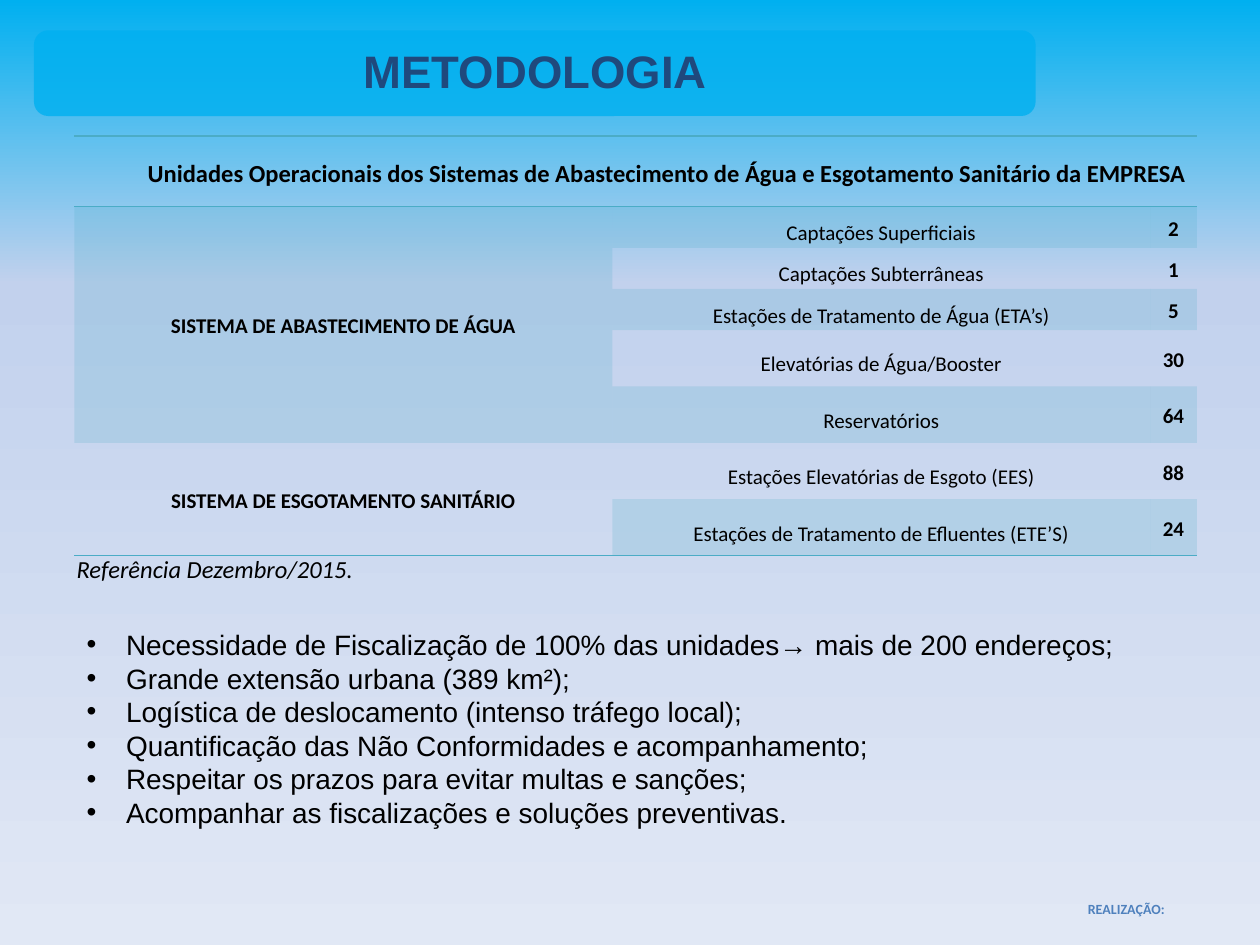
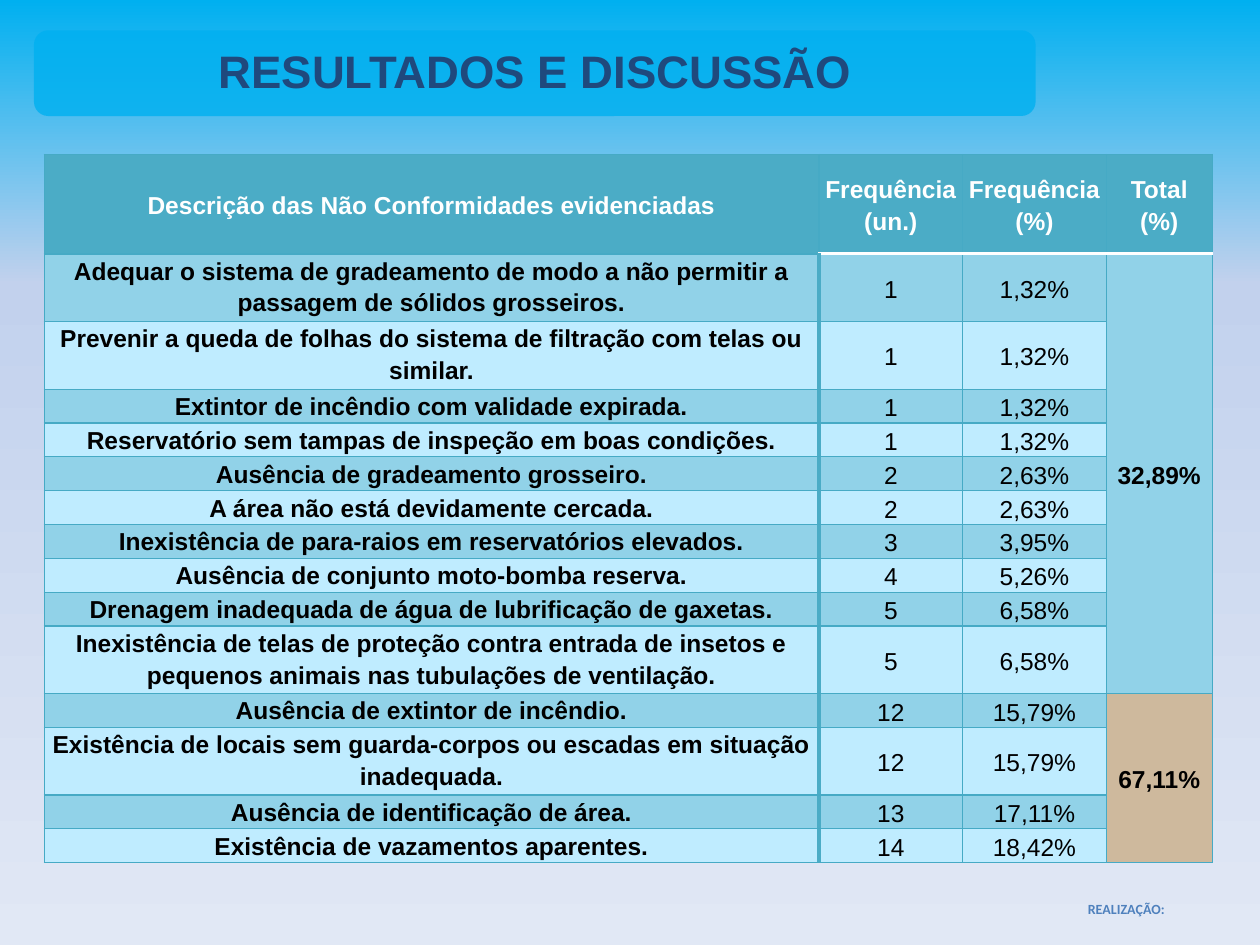
from lxml import etree
from pptx import Presentation
from pptx.dml.color import RGBColor
from pptx.enum import shapes, text as t
from pptx.oxml import parse_xml
from pptx.oxml.ns import nsdecls, qn
from pptx.util import Pt

TEAL, GRID, BLUE = "4BACC6", "46AAC5", "00B0F0"
NAVY, FOOTER, BLACK, WHITE = "1F497D", "4F81BD", "000000", "FFFFFF"
DARK_BAND, LIGHT_BAND, TAN = "91D2E8", "BFECFF", "CEB99D"
GRADIENT = [(0, BLUE), (30, "C2D1ED"), (100, "E1E8F5")]
PLAIN_TABLE = "{2D5ABB26-0587-4C30-8999-92F81FD0307C}"


def paint(fill, color, opacity=100):
    fill.solid()
    fill.fore_color.rgb = RGBColor.from_string(color)
    if opacity < 100:
        tone = fill._xPr.xpath("a:solidFill/a:srgbClr")[0]
        etree.SubElement(tone, qn("a:alpha"), val=str(opacity * 1000))


def write(frame, text, size, color=BLACK, font="Arial", bold=False, italic=False,
          centered=True, spacing=None, bullet=False):
    """Fill a text frame, one paragraph for each line of text."""
    frame.word_wrap = True
    for number, line in enumerate(text.split("\n")):
        paragraph = frame.add_paragraph() if number else frame.paragraphs[0]
        if bullet:
            properties = paragraph._p.get_or_add_pPr()
            properties.set("marL", str(Pt(22.5)))
            properties.set("indent", str(-Pt(22.5)))
            etree.SubElement(properties, qn("a:buFont"), typeface="Arial")
            etree.SubElement(properties, qn("a:buChar"), char="•")
        paragraph.alignment = t.PP_ALIGN.CENTER if centered else t.PP_ALIGN.LEFT
        if spacing:
            paragraph.line_spacing = spacing
        run = paragraph.add_run()
        run.text = line
        run.font.size, run.font.name = Pt(size), font
        run.font.bold, run.font.italic = bold, italic
        paint(run.font.fill, color)


presentation = Presentation()
presentation.slide_width, presentation.slide_height = Pt(720), Pt(540)

# Shared background
master = presentation.slide_master
background = master.background.fill
background.gradient()
background.gradient_angle = 270
stops = master.element.xpath("p:cSld/p:bg//a:gsLst")[0]
for stop in list(stops):
    stops.remove(stop)
for position, color in GRADIENT:
    stop = etree.SubElement(stops, qn("a:gs"), pos=str(position * 1000))
    etree.SubElement(stop, qn("a:srgbClr"), val=color)

# Title band, footer and an empty table on each slide
layouts = [
    ("METODOLOGIA", (42.5, 77.8), [307.4, 307.4, 26.6], [40.3] + [23.5] * 3 + [32.25] * 4, 5),
    ("RESULTADOS E DISCUSSÃO", (25.2, 88.2), [442.8, 82.1, 82.1, 60.5],
     [56.9] + [38.6 if row in (1, 2, 10, 12) else 19.3 for row in range(1, 15)], 3.6),
]
slides, tables = [], []
for title, (left, top), widths, heights, inset in layouts:
    slide = presentation.slides.add_slide(presentation.slide_layouts[6])
    band = slide.shapes.add_shape(shapes.MSO_SHAPE.ROUNDED_RECTANGLE,
                                  Pt(19.4), Pt(17.3), Pt(572.4), Pt(49))
    band.shadow.inherit = False
    band.line.fill.background()
    paint(band.fill, BLUE, 80)
    footer = slide.shapes.add_textbox(Pt(609.1), Pt(511.2), Pt(69.1), Pt(17.3))
    write(footer.text_frame, "REALIZAÇÃO:", 8, FOOTER, "Calibri", bold=True)
    heading = slide.shapes.add_textbox(Pt(25.2), Pt(20.9), Pt(561.6), Pt(39.6))
    write(heading.text_frame, title, 26, NAVY, bold=True)

    frame = slide.shapes.add_table(len(heights), len(widths), Pt(left), Pt(top),
                                   Pt(sum(widths)), Pt(sum(heights)))
    frame.element.xpath(".//a:tableStyleId")[0].text = PLAIN_TABLE
    table = frame.table
    table.first_row = table.horz_banding = False
    for column, width in zip(table.columns, widths):
        column.width = Pt(width)
    for row, height in zip(table.rows, heights):
        row.height = Pt(height)
    for cell in table.iter_cells():
        cell.margin_left = cell.margin_right = Pt(inset)
        cell.margin_top = cell.margin_bottom = 0
        cell.vertical_anchor = t.MSO_ANCHOR.MIDDLE
        cell.fill.background()
    slides.append(slide)
    tables.append(table)
borders = []

# Slide 1: operational units
units = [
    ("SISTEMA DE ABASTECIMENTO DE ÁGUA", "Captações Superficiais", "2"),
    ("", "Captações Subterrâneas", "1"),
    ("", "Estações de Tratamento de Água (ETA’s)", "5"),
    ("", "Elevatórias de Água/Booster", "30"),
    ("", "Reservatórios", "64"),
    ("SISTEMA DE ESGOTAMENTO SANITÁRIO", "Estações Elevatórias de Esgoto (EES)", "88"),
    ("", "Estações de Tratamento de Efluentes (ETE’S)", "24"),
]
slide, table = slides[0], tables[0]
table.cell(0, 0).merge(table.cell(0, 2))
table.cell(1, 0).merge(table.cell(5, 0))
table.cell(6, 0).merge(table.cell(7, 0))
write(table.cell(0, 0).text_frame,
      "\tUnidades Operacionais dos Sistemas de Abastecimento de Água e Esgotamento "
      "Sanitário da EMPRESA", 14, font="Calibri", bold=True, spacing=1.15)
for row, values in enumerate(units, 1):
    for column, value in enumerate(values):
        cell = table.cell(row, column)
        is_name = column == 1
        write(cell.text_frame, value, 12, font="Calibri", bold=not is_name,
              spacing=1.5 if is_name else 1.15)
        if (row <= 5 if column == 0 else row % 2):
            paint(cell.fill, TEAL, 20)
for column in range(3):
    borders.append((table.cell(0, column), {"T": (TEAL, 1), "B": (TEAL, 1)}))
    borders.append((table.cell(7, column), {"B": (TEAL, 1)}))
borders.append((table.cell(6, 0), {"B": (TEAL, 1)}))

needs = slide.shapes.add_textbox(Pt(42.5), Pt(355), Pt(640.8), Pt(123.8))
write(needs.text_frame, """Necessidade de Fiscalização de 100% das unidades→ mais de 200 endereços;
Grande extensão urbana (389 km²);
Logística de deslocamento (intenso tráfego local);
Quantificação das Não Conformidades e acompanhamento;
Respeitar os prazos para evitar multas e sanções;
Acompanhar as fiscalizações e soluções preventivas.""", 16, centered=False, bullet=True)
reference = slide.shapes.add_textbox(Pt(36.7), Pt(313.2), Pt(345.6), Pt(24.5))
write(reference.text_frame, "Referência Dezembro/2015.", 14, font="Calibri",
      italic=True, centered=False)

# Slide 2: nonconformities found
findings = [
    ("Descrição das Não Conformidades evidenciadas", "Frequência (un.)", "Frequência (%)",
     "Total (%)"),
    ("Adequar o sistema de gradeamento de modo a não permitir a passagem de sólidos grosseiros.",
     "1", "1,32%", "32,89%"),
    ("Prevenir a queda de folhas do sistema de filtração com telas ou similar.",
     "1", "1,32%", ""),
    ("Extintor de incêndio com validade expirada.", "1", "1,32%", ""),
    ("Reservatório sem tampas de inspeção em boas condições.", "1", "1,32%", ""),
    ("Ausência de gradeamento grosseiro.", "2", "2,63%", ""),
    ("A área não está devidamente cercada.", "2", "2,63%", ""),
    ("Inexistência de para-raios em reservatórios elevados.", "3", "3,95%", ""),
    ("Ausência de conjunto moto-bomba reserva.", "4", "5,26%", ""),
    ("Drenagem inadequada de água de lubrificação de gaxetas.", "5", "6,58%", ""),
    ("Inexistência de telas de proteção contra entrada de insetos e pequenos animais nas "
     "tubulações de ventilação.", "5", "6,58%", ""),
    ("Ausência de extintor de incêndio.", "12", "15,79%", "67,11%"),
    ("Existência de locais sem guarda-corpos ou escadas em situação inadequada.",
     "12", "15,79%", ""),
    ("Ausência de identificação de área.", "13", "17,11%", ""),
    ("Existência de vazamentos aparentes.", "14", "18,42%", ""),
]
table = tables[1]
table.cell(1, 3).merge(table.cell(10, 3))
table.cell(11, 3).merge(table.cell(14, 3))
for row, values in enumerate(findings):
    for column, value in enumerate(values):
        cell = table.cell(row, column)
        is_header = row == 0
        write(cell.text_frame, value, 14, WHITE if is_header else BLACK,
              bold=is_header or column in (0, 3), spacing=1.15)
        if is_header:
            color = TEAL
        elif column == 3:
            color = DARK_BAND if row <= 10 else TAN
        else:
            color = DARK_BAND if row % 2 else LIGHT_BAND
        paint(cell.fill, color)
        edges = {side: (GRID, 0.75) for side in "LRTB"}
        if column == 0 and not is_header:
            cell.vertical_anchor = t.MSO_ANCHOR.TOP
            edges["R"] = (TEAL, 2)
        if column == 1 and not is_header:
            edges["L"] = (TEAL, 2)
        if column and row < 2:
            edges["B" if is_header else "T"] = (WHITE, 2)
        borders.append((cell, edges))

# Cell borders, which must precede the fill in the order left, right, top, bottom
for cell, edges in borders:
    properties = cell._tc.get_or_add_tcPr()
    for index, side in enumerate(side for side in "LRTB" if side in edges):
        color, width = edges[side]
        properties.insert(index, parse_xml(
            f'<a:ln{side} {nsdecls("a")} w="{Pt(width)}"><a:solidFill>'
            f'<a:srgbClr val="{color}"/></a:solidFill></a:ln{side}>'))

presentation.save("out.pptx")
